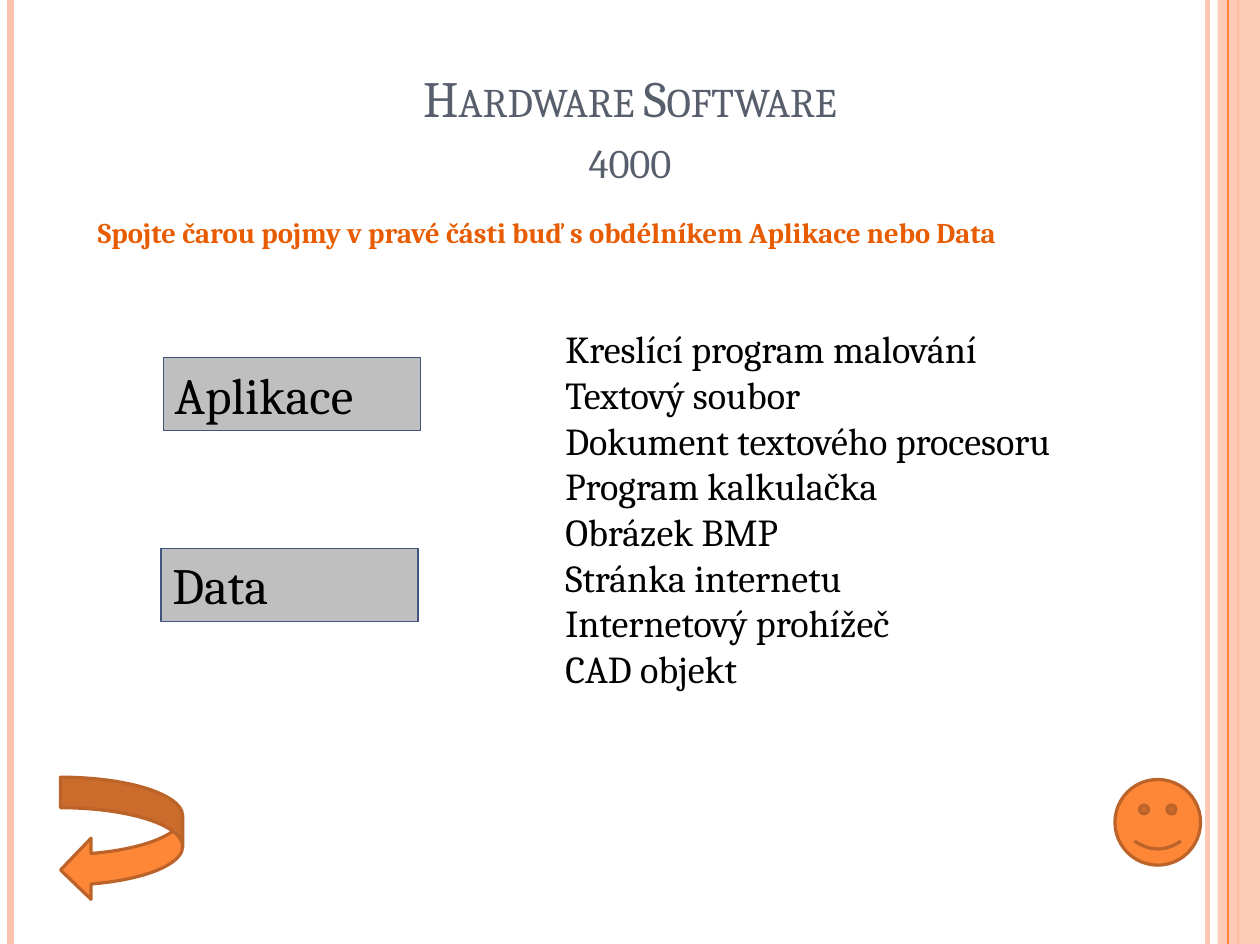
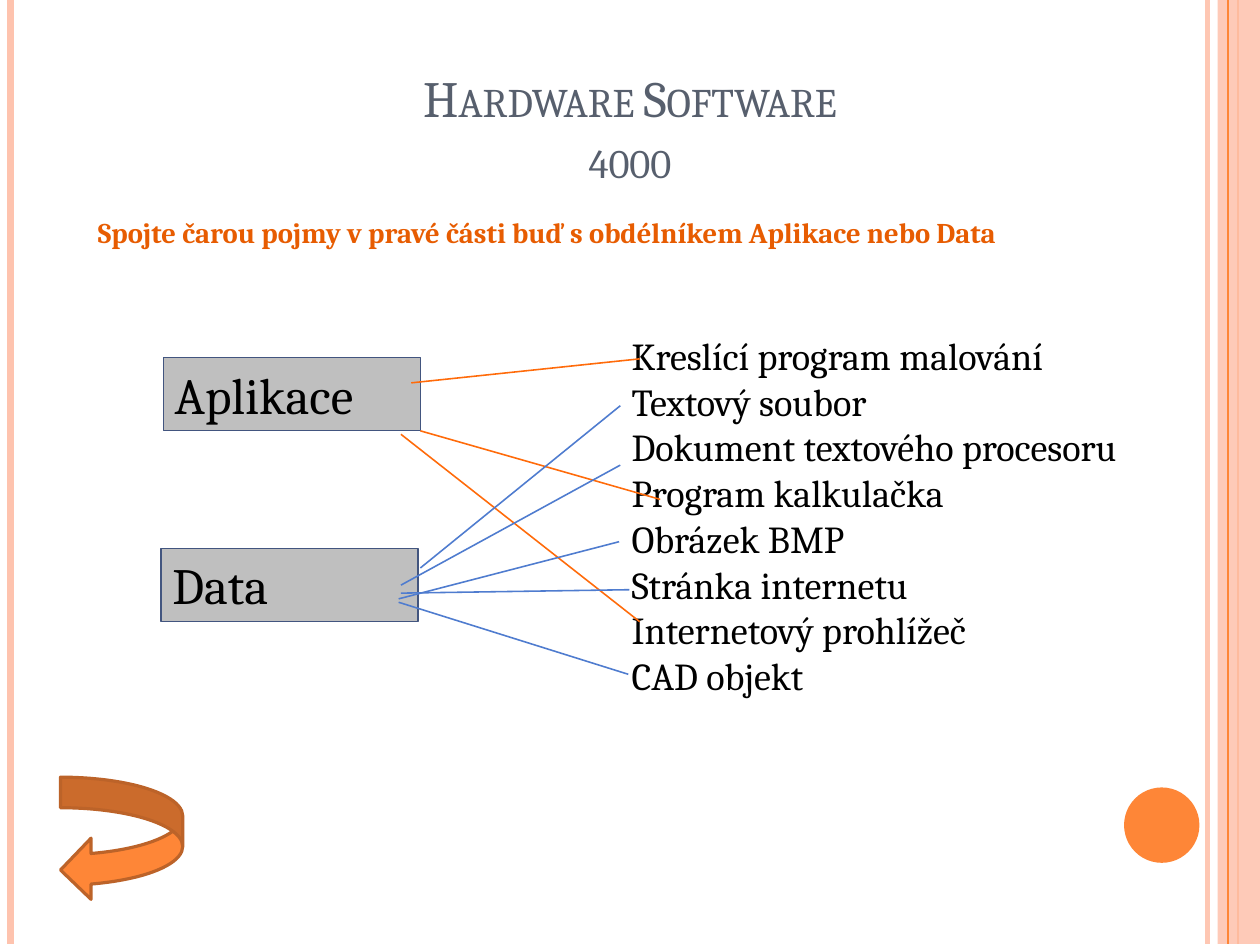
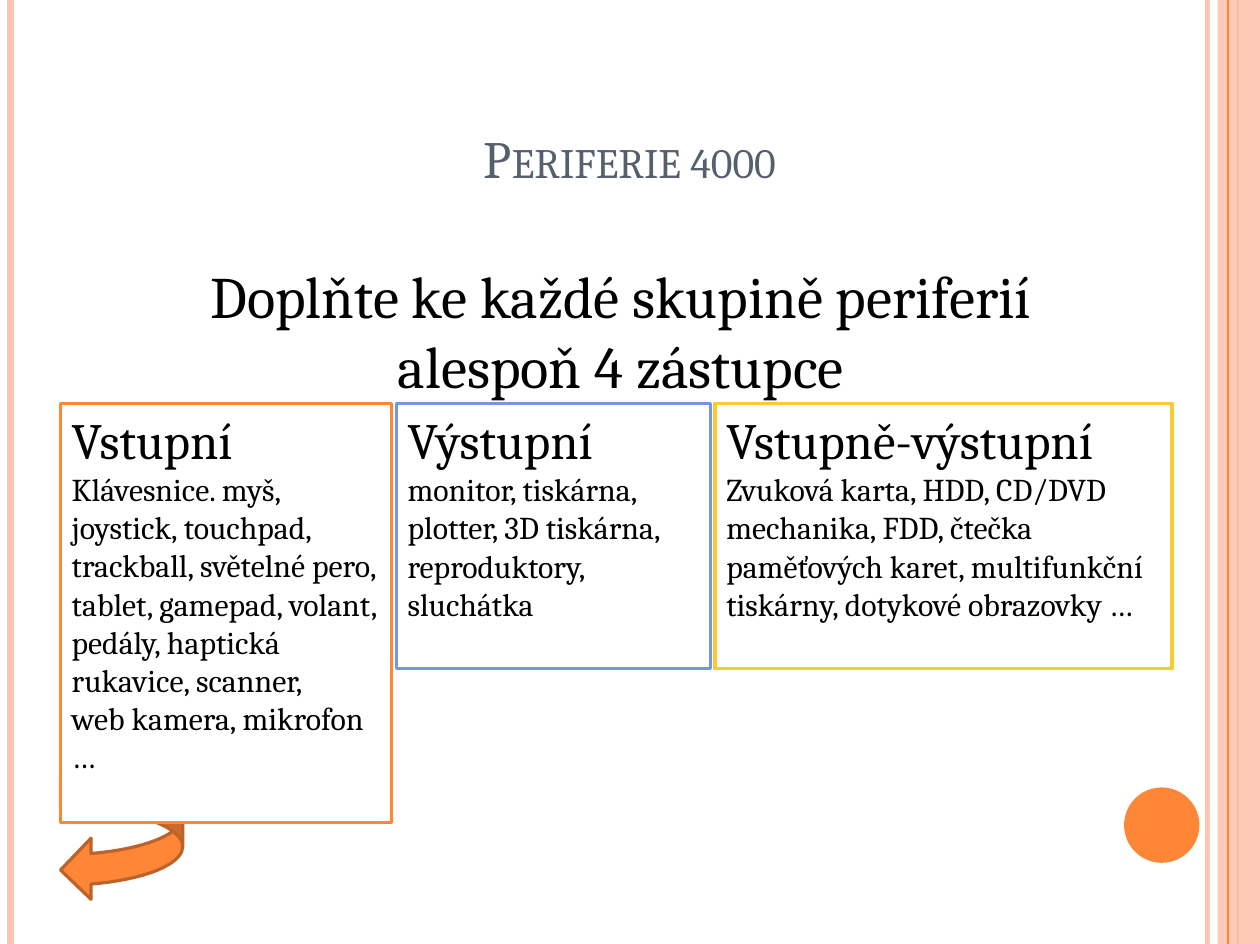
import pptx
import pptx.dml.color
import pptx.enum.shapes
import pptx.enum.text
import pptx.oxml
import pptx.oxml.ns
import pptx.util

SHAPE = pptx.enum.shapes.MSO_SHAPE
ALIGN = pptx.enum.text.PP_ALIGN
ANCHOR = pptx.enum.text.MSO_ANCHOR

COLS, ROWS = 110.3, 82.6
ORANGE, RUST, PEACH = "FE8637", "BC6329", "FEC3AE"
SLATE, BLACK, WHITE = "575F6D", "000000", "FFFFFF"
TASK = "E75C01"
GREY, NAVY = "BFBFBF", "42557F"
BLUE, YELLOW = "7598D9", "F5CD2D"
APP_LINE, DATA_LINE = "FF6B0A", "4F7CCF"


def grid(n):
    return pptx.util.Inches(n / 10)


def rgb(color):
    return pptx.dml.color.RGBColor.from_string(color)


def set_alpha(el, percent):
    clr = next(el.iter(pptx.oxml.ns.qn("a:srgbClr")))
    alpha = pptx.oxml.parse_xml(
        f'<a:alpha {pptx.oxml.ns.nsdecls("a")} val="{percent * 1000}"/>')
    clr.append(alpha)


class Deck:
    font = "Cambria"

    def __init__(self):
        self.prs = pptx.Presentation()
        self.prs.slide_width, self.prs.slide_height = grid(COLS), grid(ROWS)
        self.s = None

    def slide(self, *title, size=32):
        self.s = self.prs.slides.add_slide(self.prs.slide_layouts[6])
        self.rule(105.7, PEACH, 3, 93)
        self.rule(0.9, PEACH, 4.5)
        self.rule(108.4, ORANGE, 1.5)
        self.shape(SHAPE.RECTANGLE, (106.6, 0, 3.7, ROWS), PEACH, alpha=87)
        self.rule(107.5, ORANGE, 0.75)
        self.shape(SHAPE.OVAL, (98.4, 68.9, 6.6, 6.6), ORANGE)
        self.title(title, size)
        self.shape(SHAPE.CURVED_LEFT_ARROW, (5.3, 68, 10.7, 10.8), ORANGE, RUST)

    def line(self, start, end, color, width, alpha=None):
        sp = self.s.shapes.add_connector(
            pptx.enum.shapes.MSO_CONNECTOR.STRAIGHT,
            *(grid(n) for n in (*start, *end)))
        sp.line.color.rgb = rgb(color)
        sp.line.width = pptx.util.Pt(width)
        if alpha:
            set_alpha(sp._element.spPr, alpha)
        sp._element.spPr.append(pptx.oxml.parse_xml(
            f'<a:effectLst {pptx.oxml.ns.nsdecls("a")}/>'))

    def rule(self, x, color, width, alpha=None):
        self.line((x, 0), (x, ROWS), color, width, alpha)

    def shape(self, kind, box, fill, line=None, width=2, alpha=None):
        sp = self.s.shapes.add_shape(kind, *map(grid, box))
        sp.shadow.inherit = False
        sp.fill.solid()
        sp.fill.fore_color.rgb = rgb(fill)
        if alpha:
            set_alpha(sp._element.spPr, alpha)
        if line:
            sp.line.color.rgb = rgb(line)
            sp.line.width = pptx.util.Pt(width)
        else:
            sp.line.fill.background()
        return sp

    def run(self, p, text, size, color=BLACK, bold=False):
        r = p.add_run()
        r.text = text
        r.font.name = self.font
        r.font.size = pptx.util.Pt(size)
        r.font.bold = bold
        r.font.color.rgb = rgb(color)
        return r

    def paragraphs(self, sp, lines, align=ALIGN.LEFT, color=BLACK, bold=False):
        tf = sp.text_frame
        tf.word_wrap = True
        tf.vertical_anchor = ANCHOR.TOP
        for i, (text, size) in enumerate(lines):
            p = tf.add_paragraph() if i else tf.paragraphs[0]
            p.alignment = align
            self.run(p, text, size, color, bold)
        return tf

    def text(self, box, lines, **style):
        sp = self.s.shapes.add_textbox(*map(grid, box))
        return self.paragraphs(sp, lines, **style)

    def title(self, parts, size):
        tf = self.text((10.1, 3.3, 90.1, 13.8), [])
        tf.vertical_anchor = ANCHOR.BOTTOM
        tf.margin_bottom = grid(0.6)
        p = tf.paragraphs[0]
        p.alignment = ALIGN.CENTER
        for i, part in enumerate(parts):
            if i:
                p.add_line_break()
            r = self.run(p, part, size, SLATE)
            r._r.get_or_add_rPr().set("cap", "small")

    def panel(self, box, lines, fill, line, width):
        sp = self.shape(SHAPE.RECTANGLE, box, fill, line, width)
        self.paragraphs(sp, lines)

    def matching(self, x, y, browser):
        self.slide("Hardware Software", "4000")
        for left, top, label in ((14.3, 31.3, "Aplikace"), (14.1, 48, "Data")):
            self.panel((left, top, 22.5, 6.4), [(label, 32)], GREY, NAVY, 0.75)
        terms = ("Kreslící program malování", "Textový soubor",
                 "Dokument textového procesoru", "Program kalkulačka",
                 "Obrázek BMP", "Stránka internetu", browser, "CAD objekt")
        self.text((x, y, 52.5, 39.4), [(term, 24) for term in terms])
        self.text((7.6, 18.3, 95.3, 4), [
            ("Spojte čarou pojmy v pravé části buď s obdélníkem Aplikace nebo Data", 18)],
            color=TASK, bold=True)


def main():
    deck = Deck()

    deck.matching(48.5, 28, "Internetový prohížeč")
    deck.shape(SHAPE.SMILEY_FACE, (97.6, 68.2, 7.5, 7.5), ORANGE, RUST)

    deck.matching(54.3, 28.6, "Internetový prohlížeč")
    answers = {
        APP_LINE: (((36, 33.5), (56, 31.4)), ((36.8, 37.7), (57.8, 43.7)),
                   ((35.1, 38), (56, 54.4))),
        DATA_LINE: (((36.8, 49.7), (54.3, 35.5)), ((35.1, 51.2), (54.3, 40.7)),
                    ((34.9, 52.4), (54.2, 47.4)), ((35.1, 51.9), (55.1, 51.6)),
                    ((34.9, 52.7), (55, 59))),
    }
    for color, links in answers.items():
        for start, end in links:
            deck.line(start, end, color, 1)

    deck.slide("Periferie 4000", size=33)
    tf = deck.text((9.3, 22.2, 90.1, 12.5), [
        ("Doplňte ke každé skupině periferií alespoň 4 zástupce", 37)],
        align=ALIGN.CENTER)
    tf.paragraphs[0].space_before = pptx.util.Pt(6.6)
    groups = (
        ("Vstupní", 29, 36.7, ORANGE, (
            "Klávesnice. myš, joystick, touchpad, trackball, světelné pero, "
            "tablet, gamepad, volant, pedály, haptická rukavice, scanner,",
            "web kamera, mikrofon …")),
        ("Výstupní", 27.5, 23.2, BLUE, (
            "monitor, tiskárna, plotter, 3D tiskárna, reproduktory,",
            "sluchátka")),
        ("Vstupně-výstupní", 40, 23.2, YELLOW, (
            "Zvuková karta, HDD, CD/DVD mechanika, FDD, čtečka paměťových "
            "karet, multifunkční tiskárny, dotykové obrazovky …",)),
    )
    x, gap = 5.3, 0.4
    for name, w, h, color, items in groups:
        lines = [(name, 32)] + [(item, 20) for item in items]
        deck.panel((x, 35.3, w, h), lines, WHITE, color, 2)
        x += w + gap

    deck.prs.save("out.pptx")


if __name__ == "__main__":
    main()
